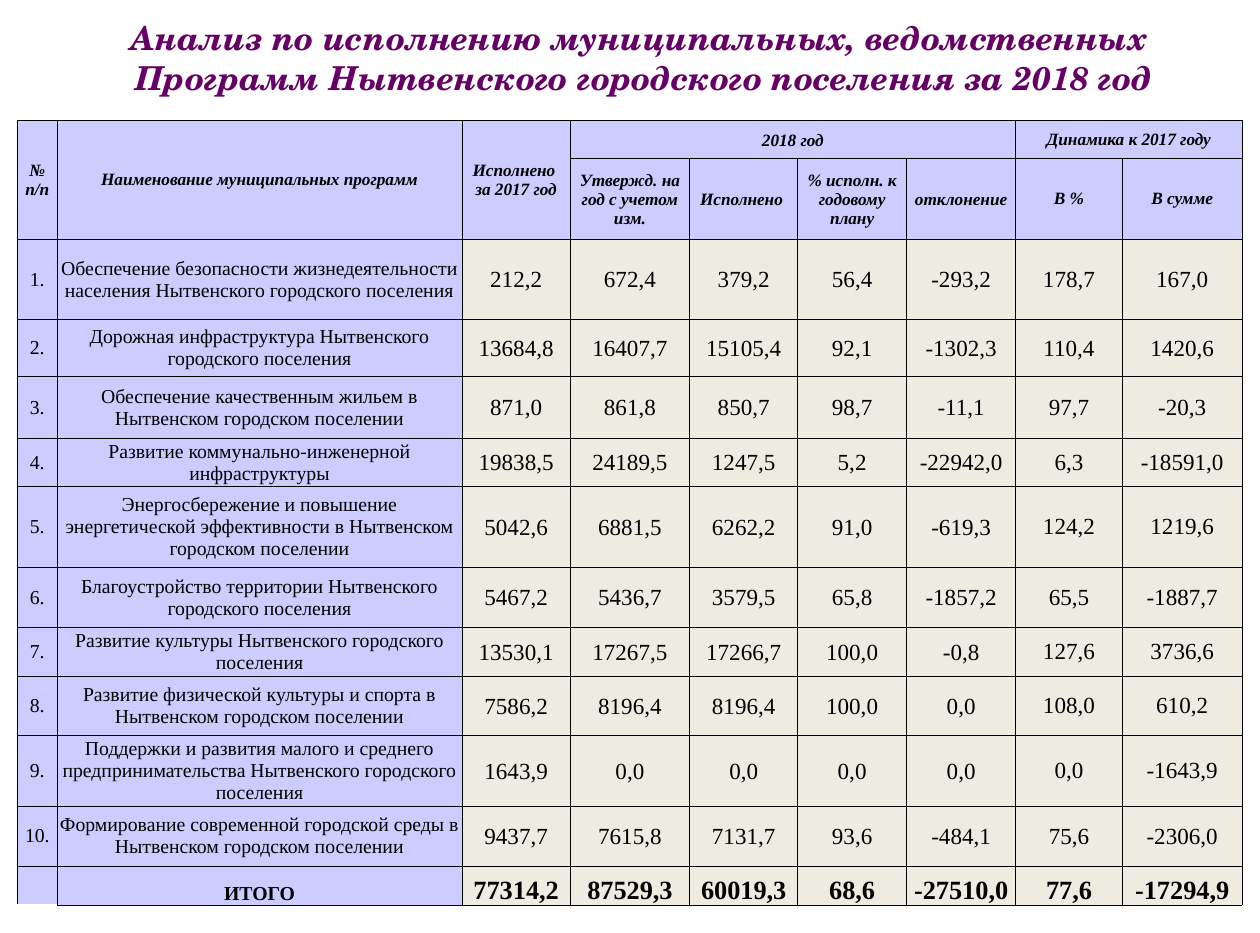
from dataclasses import dataclass
from lxml.etree import SubElement
from pptx import Presentation
from pptx.dml.color import RGBColor
from pptx.enum.text import MSO_ANCHOR, MSO_AUTO_SIZE, PP_ALIGN
from pptx.oxml.ns import qn
from pptx.util import Inches, Pt

LILAC = RGBColor(0xCC, 0xCC, 0xFF)
CREAM = RGBColor(0xEE, 0xEC, 0xE1)
PURPLE = RGBColor(0x66, 0x00, 0x66)
BLACK = RGBColor(0x00, 0x00, 0x00)

TITLE = ["Анализ по исполнению муниципальных, ведомственных ",
         "Программ Нытвенского городского поселения за 2018 год"]
COLS = [0.33, 3.42, 0.91, 1.01, 0.91, 0.92, 0.92, 0.9, 1.01]
ROWS = [0.32, 0.68, 0.68, 0.48, 0.52, 0.41, 0.68, 0.51, 0.41, 0.5, 0.58, 0.5, 0.33]
FIRST_ROW = 2
FIRST_VALUE_COL = 2
DYNAMICS_COL = 7

TITLE_FONT = {"name": "TeX Gyre Schola", "size": Pt(20), "bold": True, "italic": True}
HEAD_FONT = {"name": "Times New Roman", "size": Pt(10.5), "bold": True, "italic": True}
NAME_FONT = {"name": "Times New Roman", "size": Pt(12), "bold": False, "italic": False}
VALUE_FONT = NAME_FONT | {"size": Pt(14)}
TOTAL_NAME_FONT = NAME_FONT | {"bold": True}
TOTAL_FONT = TOTAL_NAME_FONT | {"size": Pt(16)}


def insets(side: float, top: float, bottom: float) -> dict:
    return {"margin_left": Inches(side), "margin_right": Inches(side),
            "margin_top": Inches(top), "margin_bottom": Inches(bottom)}


FLUSH = insets(0, 0, 0)
TIGHT = insets(0.01, 0.01, 0)
ROOMY = insets(0.1, 0.05, 0.05)


@dataclass
class Head:
    row: int
    col: int
    lines: list[str]
    margins: dict
    rows: int = 1
    cols: int = 1


@dataclass
class Program:
    name: str
    values: str


HEADS = [
    Head(0, 0, ["№ п/п"], FLUSH, rows=2),
    Head(0, 1, ["Наименование муниципальных программ"], FLUSH, rows=2),
    Head(0, 2, ["Исполнено ", "за 2017 год"], FLUSH, rows=2),
    Head(0, 3, ["2018 год"], TIGHT, cols=4),
    Head(0, 7, ["Динамика к 2017 году"], ROOMY, cols=2),
    Head(1, 3, ["Утвержд. на год с учетом изм."], TIGHT),
    Head(1, 4, ["Исполнено "], TIGHT),
    Head(1, 5, ["% исполн. к годовому плану"], TIGHT),
    Head(1, 6, ["отклонение"], TIGHT),
    Head(1, 7, ["В %"], ROOMY),
    Head(1, 8, ["В сумме"], ROOMY),
]
PROGRAMS = [
    Program("Обеспечение безопасности жизнедеятельности населения Нытвенского городского поселения",
            "212,2 672,4 379,2 56,4 -293,2 178,7 167,0"),
    Program("Дорожная инфраструктура Нытвенского городского поселения",
            "13684,8 16407,7 15105,4 92,1 -1302,3 110,4 1420,6"),
    Program("Обеспечение качественным жильем в Нытвенском городском поселении",
            "871,0 861,8 850,7 98,7 -11,1 97,7 -20,3"),
    Program("Развитие коммунально-инженерной инфраструктуры",
            "19838,5 24189,5 1247,5 5,2 -22942,0 6,3 -18591,0"),
    Program("Энергосбережение и повышение энергетической эффективности в Нытвенском городском поселении",
            "5042,6 6881,5 6262,2 91,0 -619,3 124,2 1219,6"),
    Program("Благоустройство территории Нытвенского городского поселения",
            "5467,2 5436,7 3579,5 65,8 -1857,2 65,5 -1887,7"),
    Program("Развитие культуры Нытвенского городского поселения",
            "13530,1 17267,5 17266,7 100,0 -0,8 127,6 3736,6"),
    Program("Развитие физической культуры и спорта в Нытвенском городском поселении",
            "7586,2 8196,4 8196,4 100,0 0,0 108,0 610,2"),
    Program("Поддержки и развития малого и среднего предпринимательства Нытвенского городского поселения",
            "1643,9 0,0 0,0 0,0 0,0 0,0 -1643,9"),
    Program("Формирование современной городской среды в Нытвенском городском поселении",
            "9437,7 7615,8 7131,7 93,6 -484,1 75,6 -2306,0"),
]
TOTAL = Program("ИТОГО", "77314,2 87529,3 60019,3 68,6 -27510,0 77,6 -17294,9")


def apply(target, values: dict) -> None:
    for key, value in values.items():
        setattr(target, key, value)


def write(tf, lines: list[str], font: dict, color: RGBColor) -> None:
    for i, line in enumerate(lines):
        p = tf.add_paragraph() if i else tf.paragraphs[0]
        p.alignment = PP_ALIGN.CENTER
        r = p.add_run()
        r.text = line
        apply(r.font, font)
        r.font.color.rgb = color


def add_borders(cell, sides: str) -> None:
    tc_pr = cell._tc.get_or_add_tcPr()
    for i, side in enumerate(sides):
        ln = SubElement(tc_pr, qn(f"a:ln{side}"), w=str(Pt(0.5)))
        fill = SubElement(ln, qn("a:solidFill"))
        SubElement(fill, qn("a:srgbClr"), val=str(BLACK))
        tc_pr.remove(ln)
        tc_pr.insert(i, ln)


def fill_cell(cell, lines: list[str], font: dict, margins: dict,
              anchor: MSO_ANCHOR = MSO_ANCHOR.MIDDLE) -> None:
    apply(cell, margins | {"vertical_anchor": anchor})
    write(cell.text_frame, lines, font, BLACK)


def fill_values(table, row: int, program: Program, font: dict, anchor: MSO_ANCHOR) -> None:
    for col, value in enumerate(program.values.split(), FIRST_VALUE_COL):
        roomy = col >= DYNAMICS_COL and program is not TOTAL
        fill_cell(table.cell(row, col), [value], font, ROOMY if roomy else TIGHT, anchor)


def add_title(s) -> None:
    sp = s.shapes.title
    apply(sp, {"left": Inches(0.82), "top": Inches(0.1),
               "width": Inches(9.22), "height": Inches(0.77)})
    tf = sp.text_frame
    apply(tf, {"word_wrap": False, "auto_size": MSO_AUTO_SIZE.SHAPE_TO_FIT_TEXT,
               "vertical_anchor": MSO_ANCHOR.TOP})
    write(tf, TITLE, TITLE_FONT, PURPLE)


def add_program_table(s) -> None:
    table = s.shapes.add_table(len(ROWS), len(COLS), Inches(0.15), Inches(1.02),
                               Inches(sum(COLS)), Inches(sum(ROWS))).table
    apply(table, {"first_row": False, "horz_banding": False})
    for col, width in zip(table.columns, COLS):
        col.width = Inches(width)
    for row, height in zip(table.rows, ROWS):
        row.height = Inches(height)

    last = len(ROWS) - 1
    for row in range(len(ROWS)):
        for col in range(len(COLS)):
            cell = table.cell(row, col)
            cell.fill.solid()
            is_value = row >= FIRST_ROW and col >= FIRST_VALUE_COL
            cell.fill.fore_color.rgb = CREAM if is_value else LILAC
            add_borders(cell, "LRT" if (row, col) == (last, 0) else "LRTB")

    for head in HEADS:
        cell = table.cell(head.row, head.col)
        if head.rows * head.cols > 1:
            cell.merge(table.cell(head.row + head.rows - 1, head.col + head.cols - 1))
        fill_cell(cell, head.lines, HEAD_FONT, head.margins)

    for number, program in enumerate(PROGRAMS, 1):
        row = FIRST_ROW + number - 1
        fill_cell(table.cell(row, 0), [f"{number}."], NAME_FONT, FLUSH)
        fill_cell(table.cell(row, 1), [program.name], NAME_FONT, FLUSH)
        fill_values(table, row, program, VALUE_FONT, MSO_ANCHOR.MIDDLE)

    apply(table.cell(last, 0), FLUSH)
    fill_cell(table.cell(last, 1), [TOTAL.name], TOTAL_NAME_FONT, TIGHT, MSO_ANCHOR.BOTTOM)
    fill_values(table, last, TOTAL, TOTAL_FONT, MSO_ANCHOR.BOTTOM)


def main() -> None:
    prs = Presentation()
    prs.slide_width = Inches(10.63)
    prs.slide_height = Inches(63 / 8)
    s = prs.slides.add_slide(prs.slide_layouts[5])
    add_title(s)
    add_program_table(s)
    prs.save("out.pptx")


if __name__ == "__main__":
    main()
